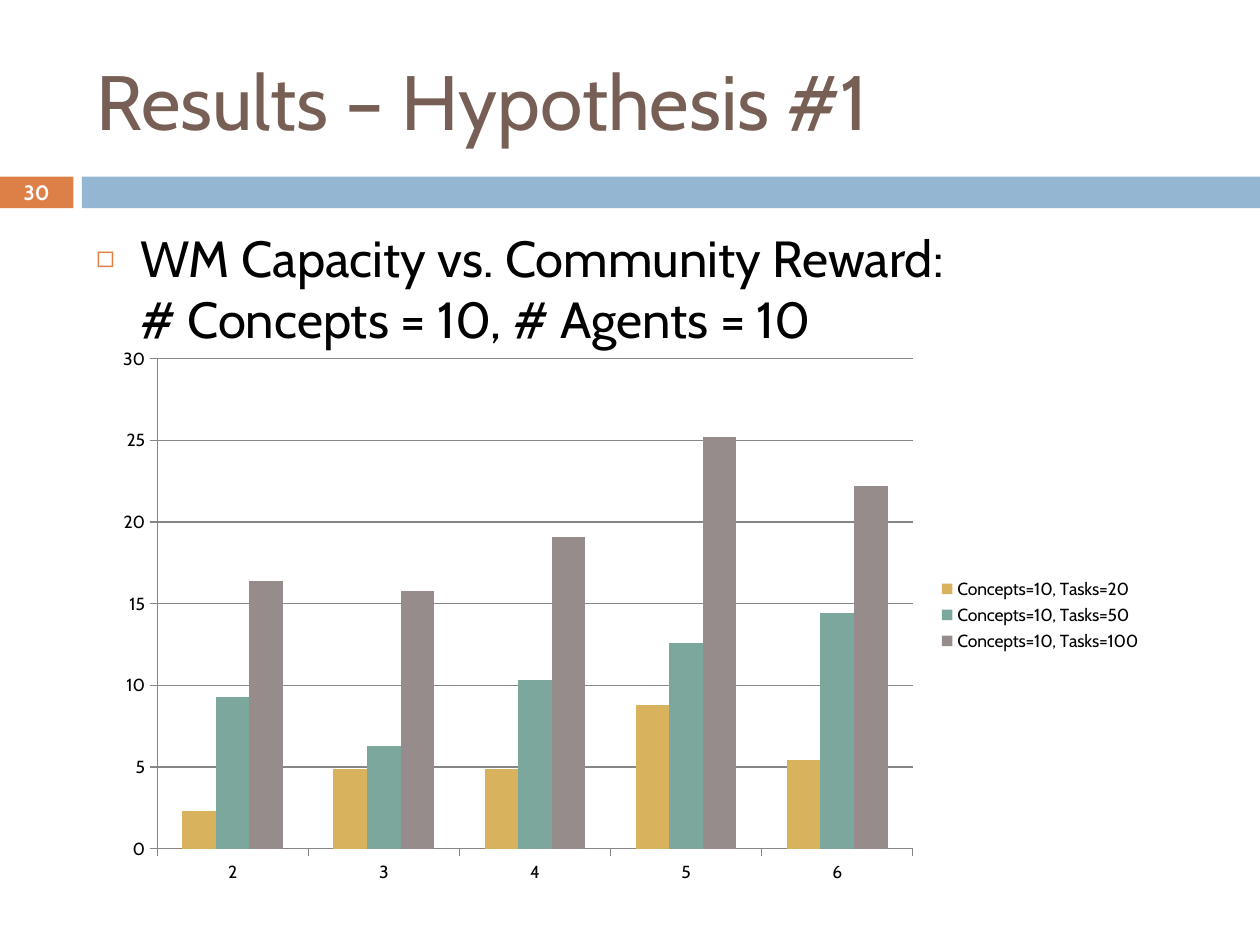
from dataclasses import dataclass
from lxml.etree import SubElement as Sub
from pptx import Presentation
from pptx.chart.data import CategoryChartData as Data
from pptx.dml.color import RGBColor as Rgb
from pptx.enum.chart import XL_CHART_TYPE as Kind, XL_LEGEND_POSITION as Side
from pptx.enum.chart import XL_TICK_MARK as Tick
from pptx.enum.shapes import MSO_SHAPE as Shape
from pptx.enum.text import MSO_ANCHOR as Anchor, PP_ALIGN as Align
from pptx.oxml.ns import qn
from pptx.util import Cm, Pt


@dataclass(frozen=True)
class Theme:
    font: str = "Cabin"
    title: str = "775F55"
    body: str = "000000"
    light: str = "FFFFFF"
    accent: str = "DD8047"
    band: str = "94B6D2"
    axis: str = "868686"
    bars: tuple = ("D8B25C", "7BA79D", "968C8C")
    big: float = 44
    mid: float = 29
    num: float = 11.9
    small: float = 10


THEME = Theme()
CATS = ("2", "3", "4", "5", "6")
ROWS = {
    "Concepts=10, Tasks=20": (2.3, 4.9, 4.9, 8.8, 5.4),
    "Concepts=10, Tasks=50": (9.3, 6.3, 10.3, 12.6, 14.4),
    "Concepts=10, Tasks=100": (16.4, 15.8, 19.1, 25.2, 22.2),
}


def style(font, size, color, bold=False):
    font.name = THEME.font
    font.size = Pt(size)
    font.bold = bold
    font.color.rgb = Rgb.from_string(color)


def add_bar(slide, box, color):
    bar = slide.shapes.add_shape(Shape.RECTANGLE, *map(Cm, box))
    bar.shadow.inherit = False
    bar.fill.solid()
    bar.fill.fore_color.rgb = Rgb.from_string(color)
    bar.line.fill.background()


def add_text(slide, box, lines, size, color, anchor=Anchor.MIDDLE, bold=False):
    frame = slide.shapes.add_textbox(*map(Cm, box)).text_frame
    frame.word_wrap = True
    frame.vertical_anchor = anchor
    para = frame.paragraphs[0]
    for i, line in enumerate(lines):
        if i:
            para.add_line_break()
        run = para.add_run()
        run.text = line
        style(run.font, size, color, bold)
    return para


def add_bullet(para):
    para.space_before = Pt(7)
    props = para._p.get_or_add_pPr()
    props.set("marL", str(Cm(0.89)))
    props.set("indent", str(Cm(-0.89)))
    color = Sub(props, qn("a:buClr"))
    Sub(color, qn("a:srgbClr"), val=THEME.accent)
    Sub(props, qn("a:buSzPct"), val="60000")
    Sub(props, qn("a:buFont"), typeface=THEME.font)
    Sub(props, qn("a:buChar"), char="◻")


def set_line(line):
    line.color.rgb = Rgb.from_string(THEME.axis)
    line.width = Pt(0.75)


def set_plot(chart, **area):
    plot = chart._chartSpace.chart.plotArea
    frame = plot.find(qn("c:layout"))
    if frame is None:
        frame = plot.makeelement(qn("c:layout"))
        plot.insert(0, frame)
    rule = Sub(frame, qn("c:manualLayout"))
    Sub(rule, qn("c:layoutTarget"), val="inner")
    for name in ("xMode", "yMode"):
        Sub(rule, qn(f"c:{name}"), val="edge")
    for name, part in area.items():
        Sub(rule, qn(f"c:{name}"), val=str(part))


def add_graph(slide, box):
    data = Data()
    data.categories = CATS
    for name, vals in ROWS.items():
        data.add_series(name, vals)
    kind = Kind.COLUMN_CLUSTERED
    chart = slide.shapes.add_chart(kind, *map(Cm, box), data).chart
    style(chart.font, THEME.small, THEME.body)
    chart.has_title = False
    chart.has_legend = True
    chart.legend.position = Side.RIGHT
    chart.legend.include_in_layout = False
    plot = chart.plots[0]
    plot.gap_width = 150
    plot.overlap = 0
    plot.vary_by_categories = False
    for row, color in zip(plot.series, THEME.bars):
        row.format.fill.solid()
        row.format.fill.fore_color.rgb = Rgb.from_string(color)
    for axis in (chart.category_axis, chart.value_axis):
        axis.major_tick_mark = Tick.OUTSIDE
        axis.minor_tick_mark = Tick.NONE
        set_line(axis.format.line)
    axis = chart.value_axis
    axis.minimum_scale, axis.maximum_scale, axis.major_unit = 0, 30, 5
    axis.tick_labels.number_format = "0"
    axis.tick_labels.number_format_is_linked = False
    axis.has_major_gridlines = True
    set_line(axis.major_gridlines.format.line)
    set_plot(chart, x=0.05, y=0.04, w=0.72, h=0.88)


def main():
    deck = Presentation()
    deck.slide_width, deck.slide_height = Cm(25.4), Cm(19.05)
    slide = deck.slides.add_slide(deck.slide_layouts[6])
    add_bar(slide, (0, 3.56, 1.48, 0.64), THEME.accent)
    add_bar(slide, (1.65, 3.56, 23.75, 0.64), THEME.band)
    add_text(slide, (1.69, 0.64, 22.66, 2.74), ["Results – Hypothesis #1"],
             THEME.big, THEME.title)
    page = add_text(slide, (0, 3.53, 1.48, 0.69), ["30"],
                    THEME.num, THEME.light, bold=True)
    page.alignment = Align.CENTER
    lines = ["WM Capacity vs. Community Reward: ",
             "# Concepts = 10, # Agents = 10"]
    body = add_text(slide, (1.69, 4.45, 22.66, 12.5), lines,
                    THEME.mid, THEME.body, Anchor.TOP)
    add_bullet(body)
    add_graph(slide, (2.11, 6.78, 21.16, 11.23))
    deck.save("out.pptx")


if __name__ == "__main__":
    main()
